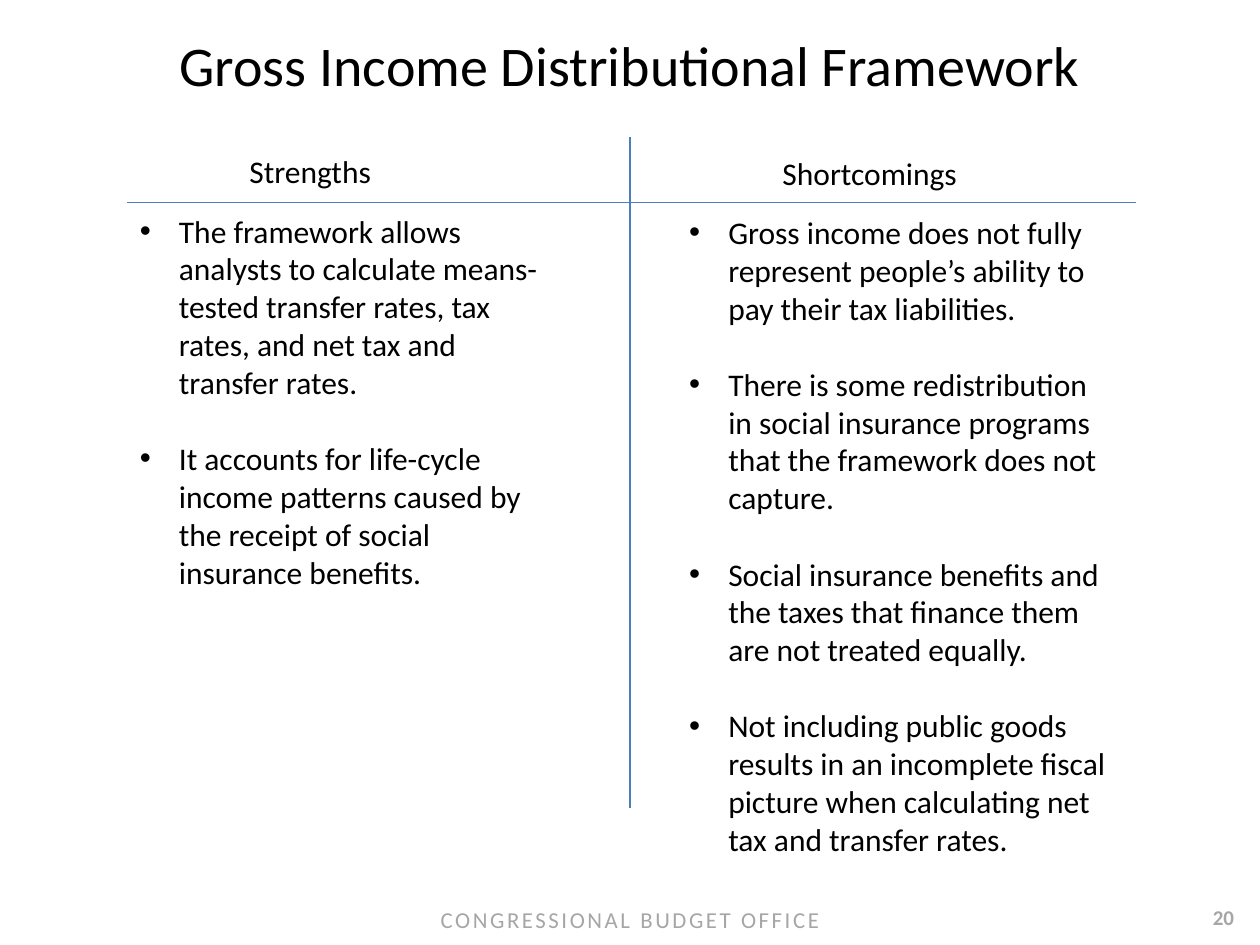
from lxml.etree import SubElement
from pptx import Presentation
from pptx.dml.color import RGBColor
from pptx.enum.shapes import MSO_CONNECTOR
from pptx.enum.text import MSO_ANCHOR, MSO_AUTO_SIZE, PP_ALIGN
from pptx.oxml.ns import qn
from pptx.util import Inches, Pt

FONT = "Calibri"
BLACK = RGBColor(0x00, 0x00, 0x00)
GREY = RGBColor(0xA6, 0xA6, 0xA6)
BLUE = RGBColor(0x4B, 0x7E, 0xBC)
BODY_SIZE = 18
LINE_GAP = Pt(22)

STRENGTHS = [
    "The framework allows analysts to calculate means-tested transfer rates, "
    "tax rates, and net tax and transfer rates.",
    "It accounts for life-cycle income patterns caused by the receipt of "
    "social insurance benefits.",
]
SHORTCOMINGS = [
    "Gross income does not fully represent people’s ability to pay their tax "
    "liabilities.",
    "There is some redistribution in social insurance programs that the "
    "framework does not capture.",
    "Social insurance benefits and the taxes that finance them are not "
    "treated equally.",
    "Not including public goods results in an incomplete fiscal picture when "
    "calculating net tax and transfer rates.",
]


def place(sp, left, top, width, height):
    sp.left, sp.top = Inches(left), Inches(top)
    sp.width, sp.height = Inches(width), Inches(height)


def set_font(p, size, color=BLACK, bold=False):
    for r in p.runs:
        r.font.name = FONT
        r.font.size = Pt(size)
        r.font.bold = bold
        r.font.color.rgb = color


def fill_line(sp, text, size, align, color=BLACK, bold=False,
              anchor=MSO_ANCHOR.TOP, wrap=True):
    """Put one formatted line of text in a shape."""
    tf = sp.text_frame
    tf.text = text
    tf.word_wrap = wrap
    tf.auto_size = MSO_AUTO_SIZE.NONE
    tf.vertical_anchor = anchor
    p = tf.paragraphs[0]
    p.alignment = align
    p.space_before = Pt(0)
    set_font(p, size, color, bold)
    return p


def add_bullet(p):
    pPr = p._p.get_or_add_pPr()
    pPr.set("marL", str(Inches(0.31)))
    pPr.set("indent", str(-Inches(0.31)))
    SubElement(pPr, qn("a:buFont")).set("typeface", "Arial")
    SubElement(pPr, qn("a:buChar")).set("char", "•")


def fill_column(heading, body, title, items, left, top, heading_left,
                heading_width, height):
    """Place a heading and its list; heading_left is measured from left."""
    place(heading, left + heading_left, top, heading_width, 0.4)
    fill_line(heading, title, BODY_SIZE, PP_ALIGN.LEFT, wrap=False)

    place(body, left, top + 0.47, 3.52, height)
    tf = body.text_frame
    tf.word_wrap = True
    tf.auto_size = MSO_AUTO_SIZE.NONE
    for i, item in enumerate(items):
        p = tf.paragraphs[0] if i == 0 else tf.add_paragraph()
        p.text = item
        p.space_before = LINE_GAP if i else Pt(0)
        add_bullet(p)
        set_font(p, BODY_SIZE)


def add_rule(slide, x1, y1, x2, y2):
    line = slide.shapes.add_connector(
        MSO_CONNECTOR.STRAIGHT, Inches(x1), Inches(y1), Inches(x2), Inches(y2))
    line.line.color.rgb = BLUE
    line.line.width = Pt(0.75)
    SubElement(line._element.spPr, qn("a:effectLst"))


def add_cross(slide, left, top, width, height):
    """Draw the header rule and the divider between the columns."""
    add_rule(slide, left, top + 0.52, left + width, top + 0.52)
    add_rule(slide, 5, top, 5, top + height)


def add_footer(slide, left, top, width):
    number = slide.shapes.add_textbox(0, 0, 0, 0)
    place(number, left + width - 0.58, top + 0.05, 0.58, 0.31)
    fill_line(number, "20", 12, PP_ALIGN.CENTER, GREY, bold=True)

    office = slide.shapes.add_textbox(0, 0, 0, 0)
    place(office, left, top, width, 0.38)
    p = fill_line(office, "CONGRESSIONAL BUDGET OFFICE", 13, PP_ALIGN.CENTER,
                  GREY, anchor=MSO_ANCHOR.MIDDLE)
    office.text_frame.margin_top = Inches(0.1)
    p.runs[0].font._element.set("spc", "150")


def main():
    prs = Presentation()
    prs.slide_width, prs.slide_height = Inches(10), Inches(7.5)
    comparison = prs.slide_layouts[4]
    slide = prs.slides.add_slide(comparison)
    title, head_l, body_l, head_r, body_r = slide.placeholders

    place(title, 0, 0.19, 10, 0.64)
    fill_line(title, "Gross Income Distributional Framework", 32,
              PP_ALIGN.CENTER)
    add_cross(slide, 1.01, 1.09, 8.01, 5.32)
    fill_column(head_l, body_l, "Strengths", STRENGTHS,
                1.01, 1.16, 0.87, 1.18, 3.43)
    fill_column(head_r, body_r, "Shortcomings", SHORTCOMINGS,
                5.37, 1.17, 0.74, 1.6, 5.25)
    add_footer(slide, 0, 7.08, 10)
    prs.save("out.pptx")


if __name__ == "__main__":
    main()
